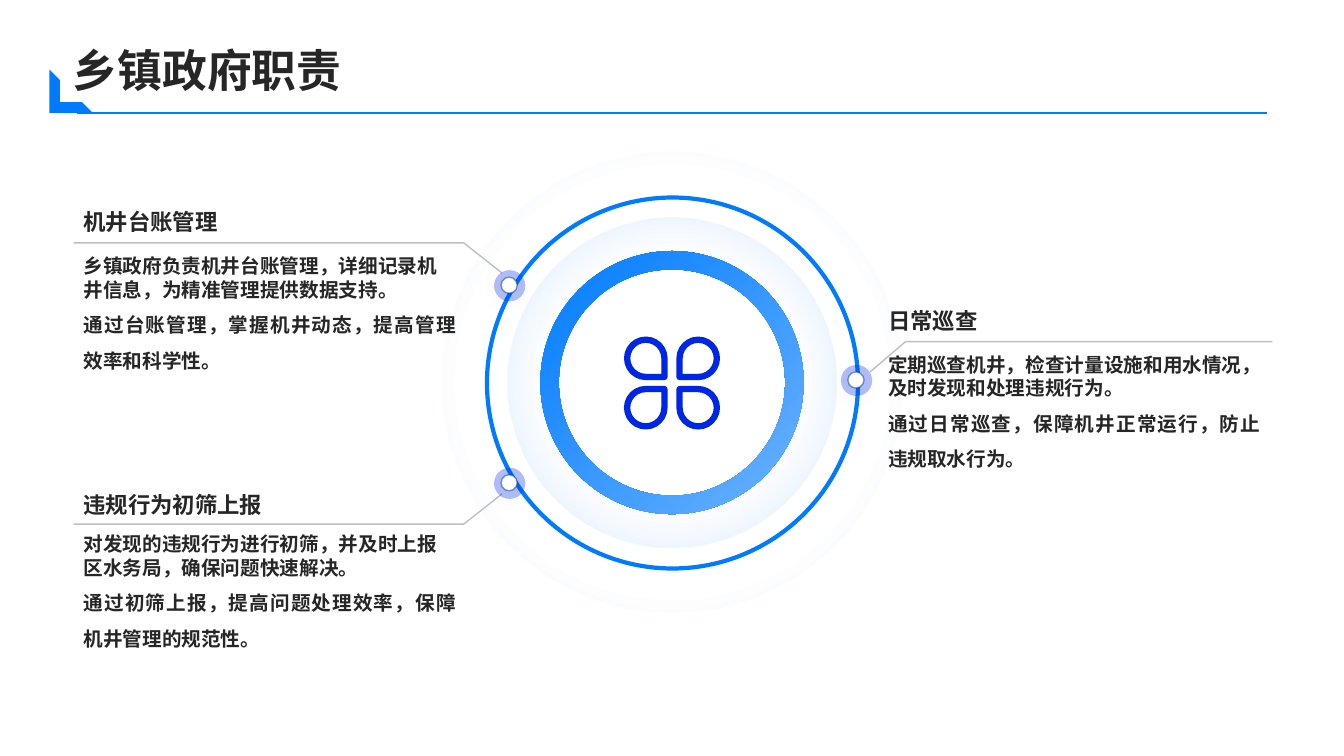
from dataclasses import dataclass
from lxml.etree import SubElement
from pptx import Presentation
from pptx.dml.color import RGBColor
from pptx.enum.shapes import MSO_CONNECTOR as Link, MSO_SHAPE as Form
from pptx.enum.text import MSO_ANCHOR as Anchor, PP_ALIGN as Align
from pptx.oxml.ns import qn
from pptx.util import Emu, Pt

PX = 9144  # one px is a hundredth of an inch


@dataclass(frozen=True)
class Theme:
    font: str = "Noto Sans CJK SC"
    ink: str = "262626"
    blue: str = "007BFF"
    sky: str = "66B0FF"
    deep: str = "0026E5"
    navy: str = "003D80"
    grey: str = "BFBFBF"
    white: str = "FFFFFF"
    title: int = 32
    head: int = 16
    body: int = 14


def px(*vals):
    return [Emu(v * PX) for v in vals]


def node(top, tag, **attrs):
    return SubElement(top, qn(tag), {k: str(v) for k, v in attrs.items()})


def tint(top, hue, alpha=100):
    clr = node(top, "a:srgbClr", val=hue)
    if alpha < 100:
        node(clr, "a:alpha", val=alpha * 1000)


class Board:
    def __init__(self, theme, slide):
        self.theme, self.slide = theme, slide
        self.items = slide.shapes

    def line(self, item, hue, width, alpha=100):
        item.line.color.rgb = RGBColor.from_string(hue)
        item.line.width = Pt(width)
        if alpha < 100:
            clr = item.line._ln.find(".//" + qn("a:srgbClr"))
            node(clr, "a:alpha", val=alpha * 1000)

    def shape(self, form, box, fill=None, alpha=100, line=None, turn=0, adj=()):
        item = self.items.add_shape(form, *px(*box))
        item.shadow.inherit = False
        item.rotation = turn
        for i, val in enumerate(adj):
            item.adjustments[i] = val
        if fill:
            item.fill.solid()
            item.fill.fore_color.rgb = RGBColor.from_string(fill)
            if alpha < 100:
                clr = item._element.spPr.find(".//" + qn("a:srgbClr"))
                node(clr, "a:alpha", val=alpha * 1000)
        else:
            item.fill.background()
        if line:
            self.line(item, *line)
        else:
            item.line.fill.background()
        return item

    def blend(self, item, stops, angle=None):
        """Gradient fill: linear with an angle, else from the centre."""
        old = item._element.spPr.find(qn("a:noFill"))
        grad = node(item._element.spPr, "a:gradFill", rotWithShape=1)
        old.getparent().replace(old, grad)
        row = node(grad, "a:gsLst")
        for pos, hue, alpha in stops:
            tint(node(row, "a:gs", pos=pos * 1000), hue, alpha)
        if angle is None:
            way = node(grad, "a:path", path="circle")
            node(way, "a:fillToRect", l=50000, t=50000, r=50000, b=50000)
        else:
            node(grad, "a:lin", ang=angle * 60000, scaled=0)

    def glow(self, box, start, alpha):
        hue = self.theme.blue
        self.blend(self.shape(Form.OVAL, box), [(start, hue, 0), (100, hue, alpha)])

    def disc(self, box):
        t = self.theme
        item = self.shape(Form.OVAL, box, t.white, line=(t.navy, 1, 50))
        pool = item._element.spPr.find(qn("a:effectLst"))
        cast = node(pool, "a:outerShdw", blurRad=Pt(15), dist=Pt(3),
                    dir=90 * 60000, algn="t", rotWithShape=0)
        tint(cast, t.blue, 10)

    def dot(self, x, y):
        self.shape(Form.OVAL, (x, y, 31, 31), self.theme.deep, 30)
        self.disc((x + 7, y + 7, 16, 16))

    def petal(self, x, y, turn):
        item = self.shape(Form.TEAR, (x, y, 37, 37),
                          line=(self.theme.deep, 4.5), turn=turn)
        node(item.line._ln, "a:round")

    def thread(self, pts):
        pen = self.items.build_freeform(*pts[0], scale=PX)
        pen.add_line_segments(pts[1:], close=False)
        item = pen.convert_to_shape()
        item.shadow.inherit = False
        item.fill.background()
        self.line(item, self.theme.grey, 1)

    def rule(self, x, y, end):
        item = self.items.add_connector(Link.STRAIGHT, *px(x, y, end, y))
        self.line(item, self.theme.blue, 1)
        node(item._element.spPr, "a:effectLst")

    def text(self, box, size, paras, anchor=Anchor.TOP, pad=(10, 5)):
        """Each paragraph is a tuple of words, alignment and line spacing."""
        frame = self.items.add_textbox(*px(*box)).text_frame
        side, edge = px(*pad)
        look = dict(word_wrap=True, vertical_anchor=anchor, margin_left=side,
                    margin_right=side, margin_top=edge, margin_bottom=edge)
        for key, val in look.items():
            setattr(frame, key, val)
        for i, (words, align, space) in enumerate(paras):
            para = frame.add_paragraph() if i else frame.paragraphs[0]
            for key, val in dict(alignment=align, line_spacing=space).items():
                setattr(para, key, val)
            run = para.add_run()
            run.text = words
            for key, val in dict(size=Pt(size), bold=True, name=self.theme.font).items():
                setattr(run.font, key, val)
            run.font.color.rgb = RGBColor.from_string(self.theme.ink)
            node(run._r.rPr, "a:ea", typeface=self.theme.font)


# Heading, two body paragraphs, left, heading top, body top, thread, dot
DUTIES = [
    ("机井台账管理",
     "乡镇政府负责机井台账管理，详细记录机井信息，为精准管理提供数据支持。",
     "通过台账管理，掌握机井动态，提高管理效率和科学性。",
     73, 159, 247, [(498, 271), (460, 241), (73, 241)], (490, 268)),
    ("违规行为初筛上报",
     "对发现的违规行为进行初筛，并及时上报区水务局，确保问题快速解决。",
     "通过初筛上报，提高问题处理效率，保障机井管理的规范性。",
     73, 440, 523, [(498, 490), (460, 520), (73, 520)], (490, 464)),
    ("日常巡查",
     "定期巡查机井，检查计量设施和用水情况，及时发现和处理违规行为。",
     "通过日常巡查，保障机井正常运行，防止违规取水行为。",
     871, 257, 345, [(863, 369), (898, 339), (1262, 339)], (834, 362)),
]


def main():
    deck = Presentation()
    deck.slide_width, deck.slide_height = px(1333, 750)
    t = Theme()
    b = Board(t, deck.slides.add_slide(deck.slide_layouts[6]))

    # Halo, orbit and threads
    b.glow((438, 151, 457, 457), 66, 10)
    b.shape(Form.OVAL, (483, 196, 368, 368), line=(t.blue, 3))
    b.glow((503, 216, 327, 327), 56, 20)
    for *_, pts, _ in DUTIES:
        b.thread(pts)

    # Duties
    for head, first, second, x, top, low, *_ in DUTIES:
        b.text((x, top, 389, 79), t.head, [(head, Align.JUSTIFY, 1.0)], Anchor.BOTTOM)
        b.text((x, low, 389, 169), t.body, [(first, Align.LEFT, Pt(16.8)),
                                            (second, Align.JUSTIFY, Pt(25.4))])

    # Hub with ring and four petals
    b.disc((551, 264, 231, 231))
    ring = b.shape(Form.DONUT, (536, 249, 261, 261), adj=[0.07])
    b.blend(ring, [(0, t.blue, 100), (95, t.sky, 100)], 45)
    for i, turn in enumerate((90, 180, 0, 270)):
        b.petal(622 + i % 2 * 52, 337 + i // 2 * 49, turn)

    # Dots on the orbit
    for *_, spot in DUTIES:
        b.dot(*spot)

    # Title
    b.text((72, 41, 1188, 51), t.title, [("乡镇政府职责", Align.JUSTIFY, 1.1)],
           Anchor.MIDDLE, (0, 0))
    b.shape(Form.HALF_FRAME, (49, 69, 43, 43), t.blue, turn=270, adj=[0.24, 0.25])
    b.rule(76, 112, 1257)

    deck.save("out.pptx")


if __name__ == "__main__":
    main()
